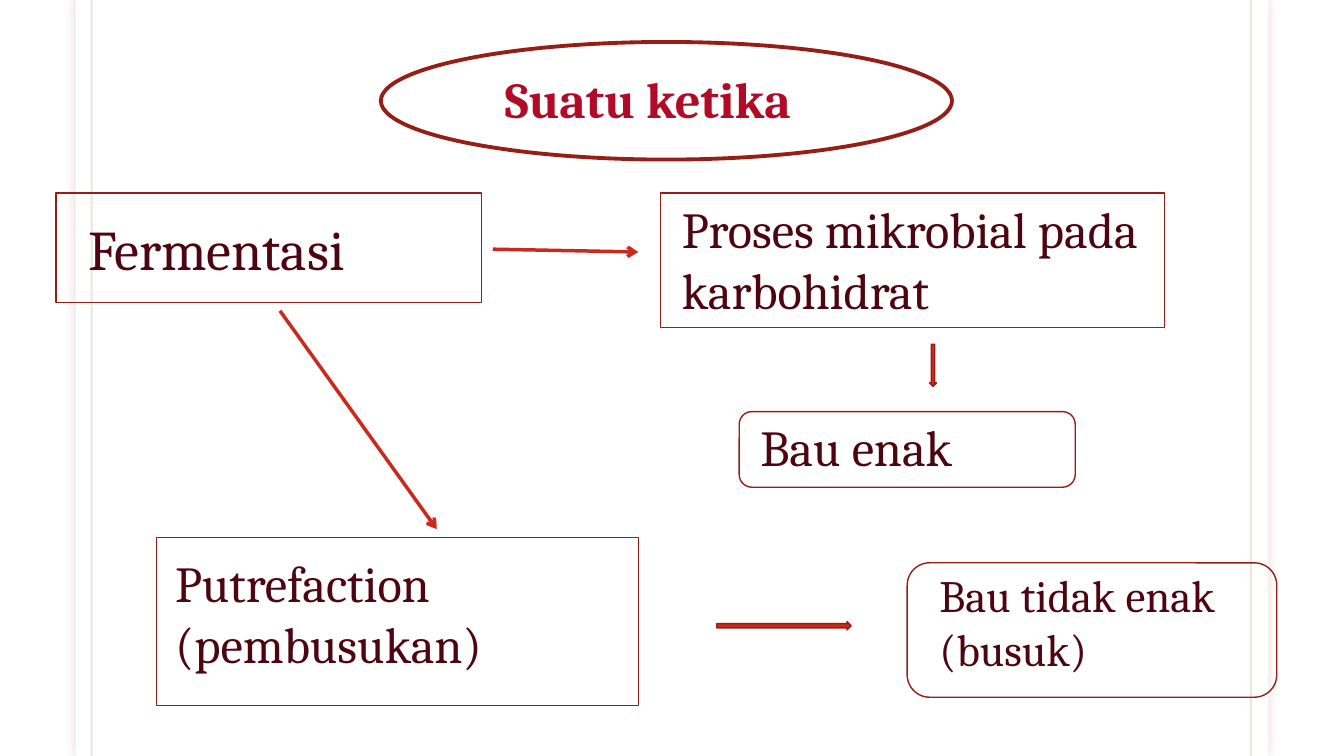
from lxml import etree
from pptx import Presentation
from pptx.dml import color
from pptx.enum import shapes, text
from pptx.oxml import ns
from pptx.util import Pt

SLIDE = (960, 540)
PAGE = (54, 0, 852, 540)
TITLE = (272, 30, 408, 84)
RED, DARK_RED, WINE, CRIMSON, GOLD = "CA2A1E", "951F16", "4D0511", "B10C27", "79540B"
KIND = shapes.MSO_SHAPE

NODES = [
    ("Fermentasi", KIND.RECTANGLE, (40, 138, 304, 78), (16, 12, 296), 40),
    ("Proses mikrobial pada karbohidrat", KIND.RECTANGLE, (472, 138, 360, 96), (8, 0, 384), 36),
    ("Bau enak", KIND.ROUNDED_RECTANGLE, (528, 294, 240, 54), (8, 0, 224), 36),
    ("Putrefaction (pembusukan)", KIND.RECTANGLE, (112, 384, 344, 120), (6, 7, 368), 36),
    ("Bau tidak enak (busuk)", KIND.ROUNDED_RECTANGLE, (648, 402, 264, 96), (16, 0, 248), 32),
]
BLOCK_ARROWS = [
    (KIND.DOWN_ARROW, (664, 246, 5, 30)),
    (KIND.RIGHT_ARROW, (512, 444, 96, 6)),
]
LINE_ARROWS = [(352, 178, 456, 180), (200, 222, 312, 378)]


def rgb(value):
    return color.RGBColor.from_string(value)


def points(values):
    return [Pt(value) for value in values]


def apply(target, formats):
    for name, value in formats.items():
        setattr(target, name, value)


def add_child(parent, tag, **attributes):
    return etree.SubElement(parent, ns.qn(tag), attributes)


def draw_shape(slide, kind, box, fill=None, line=None, width=1):
    shape = slide.shapes.add_shape(kind, *points(box))
    shape.shadow.inherit = False
    if fill:
        shape.fill.solid()
        shape.fill.fore_color.rgb = rgb(fill)
    else:
        shape.fill.background()
    if line:
        shape.line.color.rgb = rgb(line)
        shape.line.width = Pt(width)
    else:
        shape.line.fill.background()
    return shape


def draw_line(slide, ends, line, width):
    connector = slide.shapes.add_connector(shapes.MSO_CONNECTOR.STRAIGHT, *points(ends))
    connector.line.color.rgb = rgb(line)
    connector.line.width = Pt(width)
    add_child(connector.element.spPr, "a:effectLst")
    return connector


def write_text(shape, words, size, ink, bold=False, anchor=text.MSO_ANCHOR.TOP, spacing=1.0):
    frame = shape.text_frame
    apply(frame, {"word_wrap": True, "auto_size": text.MSO_AUTO_SIZE.NONE, "vertical_anchor": anchor})
    paragraph = frame.paragraphs[0]
    paragraph.text = words
    apply(paragraph, {"alignment": text.PP_ALIGN.LEFT, "line_spacing": spacing, "space_before": Pt(0)})
    font = paragraph.runs[0].font
    apply(font, {"name": "Cambria", "size": Pt(size), "bold": bold})
    font.color.rgb = rgb(ink)


def draw_page(slide, box):
    left, top, width, height = box
    panel = draw_shape(slide, KIND.RECTANGLE, box, fill="FFFFFF")
    effects = panel.element.spPr.find(ns.qn("a:effectLst"))
    shadow = add_child(effects, "a:outerShdw", blurRad=str(Pt(7)), dist="0", dir="0", algn="ctr", rotWithShape="0")
    tint = add_child(shadow, "a:srgbClr", val="65150F")
    add_child(tint, "a:alpha", val="15000")
    for x in (left + 11.5, left + width - 12.5):
        margin = draw_line(slide, (x, top, x, top + height), GOLD, 1.5)
        tint = margin.line._get_or_add_ln().find(".//" + ns.qn("a:srgbClr"))
        add_child(tint, "a:alpha", val="15000")


def draw_title(slide, box):
    left, top, width, height = box
    title = slide.shapes.title
    slide.shapes.element.append(title.element)
    frame = {"left": left + 81.5, "top": top - 5, "width": 486, "height": 70.5}
    apply(title, {name: Pt(value) for name, value in frame.items()})
    write_text(title, "Suatu ketika", 36, CRIMSON, True, text.MSO_ANCHOR.BOTTOM, 0.85)
    draw_shape(slide, KIND.OVAL, box, line=DARK_RED, width=2.75)


def draw_node(slide, box, words, kind, label, size):
    left, top, width, height = box
    indent, drop, label_width = label
    draw_shape(slide, kind, box, line=DARK_RED)
    label_box = (left + indent, top + drop, label_width, height - drop)
    write_text(slide.shapes.add_textbox(*points(label_box)), words, size, WINE)


def draw_line_arrow(slide, ends):
    arrow = draw_line(slide, ends, RED, 2.5)
    add_child(arrow.line._get_or_add_ln(), "a:tailEnd", type="arrow")


def main():
    presentation = Presentation()
    presentation.slide_width, presentation.slide_height = points(SLIDE)
    slide = presentation.slides.add_slide(presentation.slide_layouts[5])
    draw_page(slide, PAGE)
    draw_title(slide, TITLE)
    for words, kind, box, label, size in NODES:
        draw_node(slide, box, words, kind, label, size)
    for kind, box in BLOCK_ARROWS:
        draw_shape(slide, kind, box, fill=RED, line=DARK_RED)
    for ends in LINE_ARROWS:
        draw_line_arrow(slide, ends)
    presentation.save("out.pptx")


if __name__ == "__main__":
    main()
